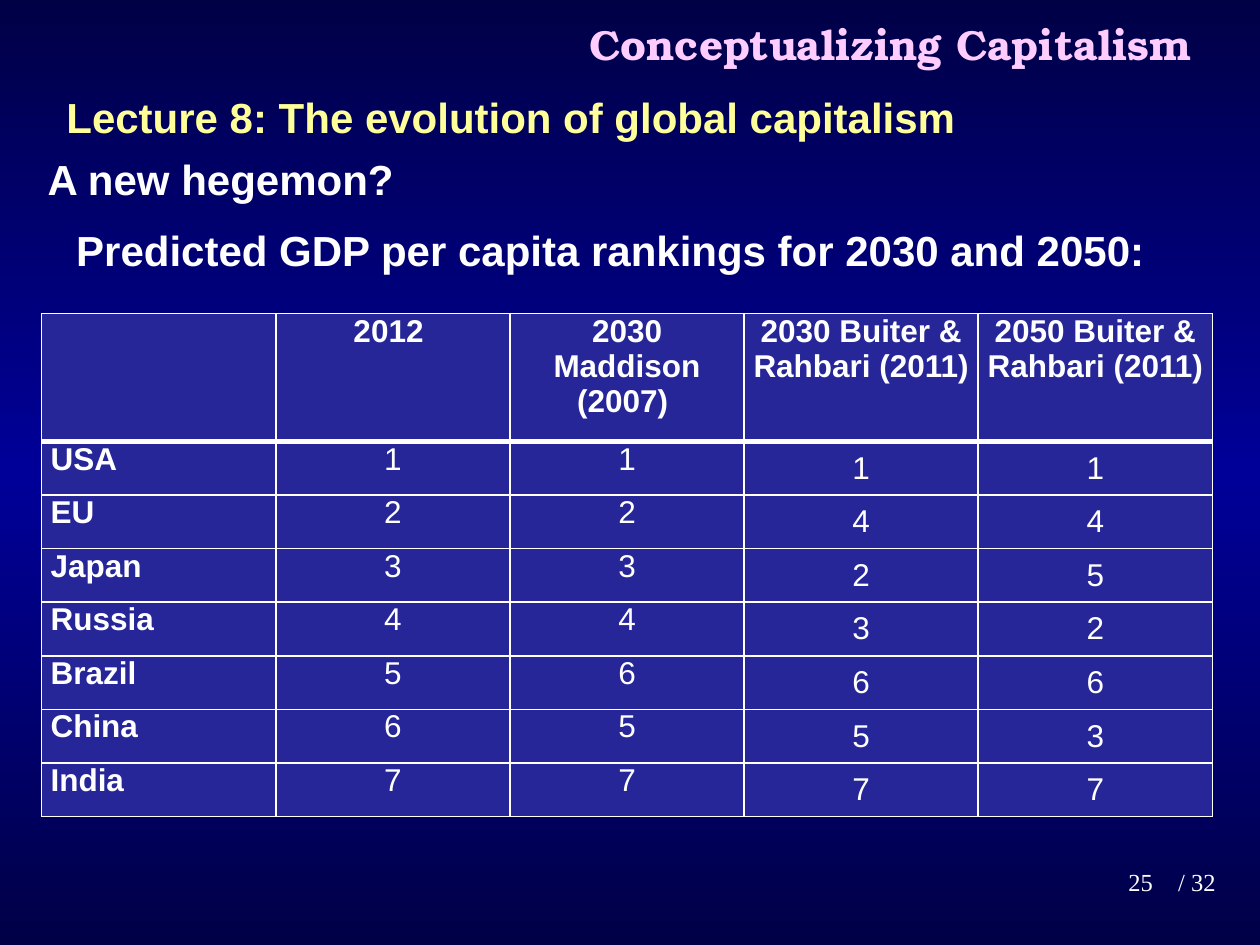
from copy import deepcopy

from lxml import etree
from pptx import Presentation
from pptx.dml.color import RGBColor
from pptx.enum.text import MSO_ANCHOR, MSO_AUTO_SIZE, PP_ALIGN
from pptx.oxml.ns import qn
from pptx.util import Cm, Pt

LEFT, CENTER, RIGHT = PP_ALIGN.LEFT, PP_ALIGN.CENTER, PP_ALIGN.RIGHT
TOP, MIDDLE = MSO_ANCHOR.TOP, MSO_ANCHOR.MIDDLE
GROW = MSO_AUTO_SIZE.SHAPE_TO_FIT_TEXT

COLORS = {
    "edge": "000047",
    "glow": "000099",
    "cell": "262699",
    "white": "FFFFFF",
    "title": "FFCCFF",
    "lecture": "FFFF99",
}
SANS, DISPLAY, SERIF = "Arial", "TeX Gyre Bonum", "Times New Roman"

RANKINGS = [
    ["", "2012 ", "2030 Maddison (2007) ", "2030 Buiter & Rahbari (2011)",
     "2050 Buiter & Rahbari (2011)"],
    ["USA", "1", "1", "1", "1"],
    ["EU", "2", "2", "4", "4"],
    ["Japan", "3", "3", "2", "5"],
    ["Russia", "4", "4", "3", "2"],
    ["Brazil", "5", "6", "6", "6"],
    ["China", "6", "5", "5", "3"],
    ["India", "7", "7", "7", "7"],
]


def color(name):
    return RGBColor.from_string(COLORS[name])


def style_paragraph(paragraph, font_name, size, color_name, bold, align):
    paragraph.alignment = align
    font = paragraph.font
    font.name, font.size, font.bold = font_name, Pt(size), bold
    font.color.rgb = color(color_name)


def paint_background(page):
    fill = page.background.fill
    fill.gradient()
    fill.gradient_angle = 90
    for stop, position, name in zip(fill.gradient_stops, (0, 0.5), ("edge", "glow")):
        stop.position = position
        stop.color.rgb = color(name)
    stops = page.element.find(".//" + qn("a:gsLst"))
    last_stop = deepcopy(stops[0])
    last_stop.set("pos", "100000")
    stops.append(last_stop)


def add_text(page, area, lines, font_name=SANS, size=24, color_name="white",
             bold=True, anchor=TOP, grow=True):
    box = page.shapes.add_textbox(*(Cm(length) for length in area))
    frame = box.text_frame
    frame.word_wrap = True
    frame.vertical_anchor = anchor
    if grow:
        frame.auto_size = GROW
    for index, (text, align) in enumerate(lines):
        para = frame.add_paragraph() if index else frame.paragraphs[0]
        para.text = text
        if index:
            para.space_before = Pt(12)
        style_paragraph(para, font_name, size, color_name, bold, align)


def set_borders(cell, widths):
    properties = cell._tc.get_or_add_tcPr()
    for index, (side, width) in enumerate(zip("LRTB", widths)):
        line = etree.Element(qn(f"a:ln{side}"), w=str(Pt(width)))
        fill = etree.SubElement(line, qn("a:solidFill"))
        etree.SubElement(fill, qn("a:srgbClr"), val=COLORS["white"])
        properties.insert(index, line)


def fill_cell(cell, text, row, column):
    cell.margin_left = cell.margin_right = Cm(0.18)
    cell.margin_top = cell.margin_bottom = 0
    cell.vertical_anchor = MIDDLE if row and column > 2 else TOP
    cell.fill.solid()
    cell.fill.fore_color.rgb = color("cell")
    para = cell.text_frame.paragraphs[0]
    para.text = text
    para.space_before = para.space_after = Pt(6)
    is_label = row == 0 or column == 0
    align = LEFT if row and column == 0 else CENTER
    style_paragraph(para, SANS, 18, "white", is_label, align)
    set_borders(cell, (1, 1, 3 if row == 1 else 1, 3 if row == 0 else 1))


def add_rankings(page):
    frame = page.shapes.add_table(len(RANKINGS), len(RANKINGS[0]),
                                  Cm(0.84), Cm(6.32), Cm(23.6), Cm(10.17))
    table = frame.table
    table.first_row = table.horz_banding = False
    for column in table.columns:
        column.width = Cm(4.72)
    for index, row in enumerate(table.rows):
        row.height = Cm(1.08 if index else 2.58)
    for row, values in enumerate(RANKINGS):
        for column, text in enumerate(values):
            fill_cell(table.cell(row, column), text, row, column)


def main():
    deck = Presentation()
    deck.slide_width, deck.slide_height = Cm(25.4), Cm(19.05)
    page = deck.slides.add_slide(deck.slide_layouts[6])
    paint_background(page)
    add_text(page, (0.71, 2.97, 23.19, 2.74),
             [("A new hegemon?", LEFT),
              ("Predicted GDP per capita rankings for 2030 and 2050:", CENTER)])
    add_text(page, (10.49, 0.03, 14.91, 1.7), [("Conceptualizing Capitalism", CENTER)],
             font_name=DISPLAY, color_name="title", anchor=MIDDLE, grow=False)
    add_text(page, (21.31, 17.35, 2.18, 1.27), [("25", RIGHT)],
             font_name=SERIF, size=14, bold=False, grow=False)
    add_text(page, (23.5, 17.35, 1.9, 0.84), [("/ 32", LEFT)],
             font_name=SERIF, size=14, bold=False)
    add_text(page, (1.09, 1.73, 19.81, 1.27),
             [("Lecture 8: The evolution of global capitalism", LEFT)],
             color_name="lecture")
    add_rankings(page)
    deck.save("out.pptx")


if __name__ == "__main__":
    main()
